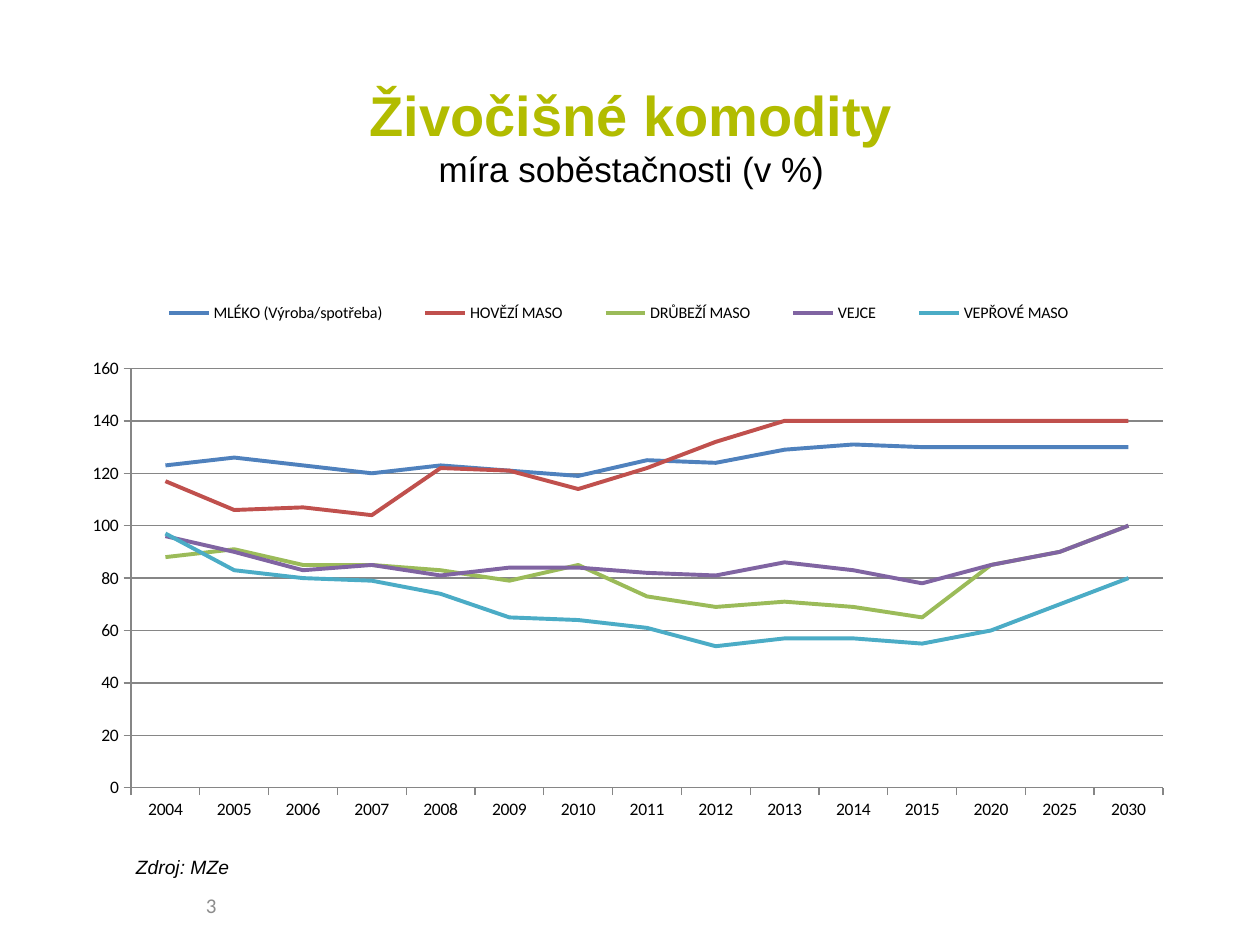
from lxml import etree
from pptx import Presentation
from pptx.chart.data import CategoryChartData
from pptx.dml.color import RGBColor as RGB
from pptx.enum.chart import XL_CHART_TYPE as ChartType, XL_LEGEND_POSITION as LegendPos
from pptx.enum.chart import XL_MARKER_STYLE as Marker, XL_TICK_MARK as Tick
from pptx.enum.text import MSO_ANCHOR as Anchor, MSO_AUTO_SIZE as AutoSize, PP_ALIGN as Align
from pptx.oxml.ns import qn
from pptx.util import Cm, Pt

# Content
HEADING = "Živočišné komodity"
SUBHEADING = "míra soběstačnosti (v %)"
SOURCE = "Zdroj: MZe"
PAGE_NUMBER = "3"
YEARS = [str(year) for year in (*range(2004, 2016), 2020, 2025, 2030)]
COMMODITIES = [
    ("MLÉKO (Výroba/spotřeba)", "4F81BD",
     (123, 126, 123, 120, 123, 121, 119, 125, 124, 129, 131, 130, 130, 130, 130)),
    ("HOVĚZÍ MASO", "C0504D",
     (117, 106, 107, 104, 122, 121, 114, 122, 132, 140, 140, 140, 140, 140, 140)),
    ("DRŮBEŽÍ MASO", "9BBB59",
     (88, 91, 85, 85, 83, 79, 85, 73, 69, 71, 69, 65, 85, 90, 100)),
    ("VEJCE", "8064A2",
     (96, 90, 83, 85, 81, 84, 84, 82, 81, 86, 83, 78, 85, 90, 100)),
    ("VEPŘOVÉ MASO", "4BACC6",
     (97, 83, 80, 79, 74, 65, 64, 61, 54, 57, 57, 55, 60, 70, 80)),
]

# Theme: (font, size, colour) for each kind of text
THEME = {
    "heading": ("Arial", 32, "B2BC00"),
    "subheading": ("Arial", 20, "000000"),
    "source": ("Arial", 11, "000000"),
    "page": ("Calibri", 12, "8C8C8C"),
    "axis": ("Calibri", 10, "000000"),
    "legend": ("Calibri", 9.2, "000000"),
    "grid": "868686",
}

# Left, top, width, height in cm
TITLE_AREA = (1.3, 0.74, 22.86, 3.96)
CHART_AREA = (1.27, 3.73, 22.86, 13.21)
SOURCE_AREA = (2.49, 17.12, 2.79, 0.74)
PAGE_AREA = (1.3, 17.73, 5.92, 1.02)

# Left, top, width, height as shares of the chart
PLOT_SHARE = (0.06, 0.28, 0.91, 0.64)
LEGEND_SHARE = (0.06, 0.16, 0.86, 0.07)


def style(font, role):
    font.name, size, colour = THEME[role]
    font.size = Pt(size)
    font.color.rgb = RGB.from_string(colour)


def add_run(paragraph, text, role, bold=False, italic=False):
    run = paragraph.add_run()
    run.text = text
    style(run.font, role)
    run.font.bold, run.font.italic = bold, italic


def add_text_area(slide, area, anchor=Anchor.TOP, align=Align.LEFT):
    frame = slide.shapes.add_textbox(*map(Cm, area)).text_frame
    frame.word_wrap = True
    frame.vertical_anchor = anchor
    paragraph = frame.paragraphs[0]
    paragraph.alignment = align
    return frame, paragraph


def place_in_chart(part, index, share, inner=False):
    """Give a chart part a fixed layout as its child number index."""
    for old in part.findall(qn("c:layout")):
        part.remove(old)
    layout = etree.Element(qn("c:layout"))
    part.insert(index, layout)
    manual = etree.SubElement(layout, qn("c:manualLayout"))
    settings = [("layoutTarget", "inner")] if inner else []
    settings += [("xMode", "edge"), ("yMode", "edge"), *zip("xywh", share)]
    for tag, value in settings:
        etree.SubElement(manual, qn(f"c:{tag}")).set("val", str(value))


def style_axis(axis):
    style(axis.tick_labels.font, "axis")
    axis.major_tick_mark, axis.minor_tick_mark = Tick.OUTSIDE, Tick.NONE
    axis.format.line.color.rgb = RGB.from_string(THEME["grid"])
    axis.format.line.width = Pt(0.75)


def add_commodity_chart(slide):
    figures = CategoryChartData(number_format="0")
    figures.categories = YEARS
    for name, _, shares in COMMODITIES:
        figures.add_series(name, shares)
    chart = slide.shapes.add_chart(ChartType.LINE, *map(Cm, CHART_AREA), figures).chart
    chart.has_title = False
    style(chart.font, "axis")

    # Axes and gridlines
    years, percent = chart.category_axis, chart.value_axis
    style_axis(years)
    style_axis(percent)
    percent.minimum_scale, percent.maximum_scale, percent.major_unit = 0, 160, 20
    percent.has_major_gridlines = True
    grid = percent.major_gridlines.format.line
    grid.color.rgb = RGB.from_string(THEME["grid"])
    grid.width = Pt(0.75)

    # Lines
    plot = chart.plots[0]
    plot.vary_by_categories = False
    for line, (_, colour, _) in zip(plot.series, COMMODITIES):
        line.smooth = False
        line.marker.style = Marker.NONE
        line.format.line.color.rgb = RGB.from_string(colour)
        line.format.line.width = Pt(2.25)

    # Legend and layout
    chart.has_legend = True
    legend = chart.legend
    legend.position = LegendPos.TOP
    legend.include_in_layout = False
    style(legend.font, "legend")
    legend_part = chart.element.find(".//" + qn("c:legend"))
    place_in_chart(legend_part, 1, LEGEND_SHARE)
    place_in_chart(chart.element.find(".//" + qn("c:plotArea")), 0, PLOT_SHARE, inner=True)


def main():
    deck = Presentation()
    deck.slide_width, deck.slide_height = Cm(25.4), Cm(19.05)
    slide = deck.slides.add_slide(deck.slide_layouts[6])

    # Title
    _, title = add_text_area(slide, TITLE_AREA, Anchor.MIDDLE, Align.CENTER)
    add_run(title, HEADING, "heading", bold=True)
    title.add_line_break()
    add_run(title, SUBHEADING, "subheading")

    add_commodity_chart(slide)

    # Source and page number
    source_frame, source = add_text_area(slide, SOURCE_AREA)
    source_frame.auto_size = AutoSize.SHAPE_TO_FIT_TEXT
    add_run(source, SOURCE, "source", italic=True)
    _, page = add_text_area(slide, PAGE_AREA, Anchor.MIDDLE, Align.CENTER)
    add_run(page, PAGE_NUMBER, "page")

    deck.save("out.pptx")


if __name__ == "__main__":
    main()
